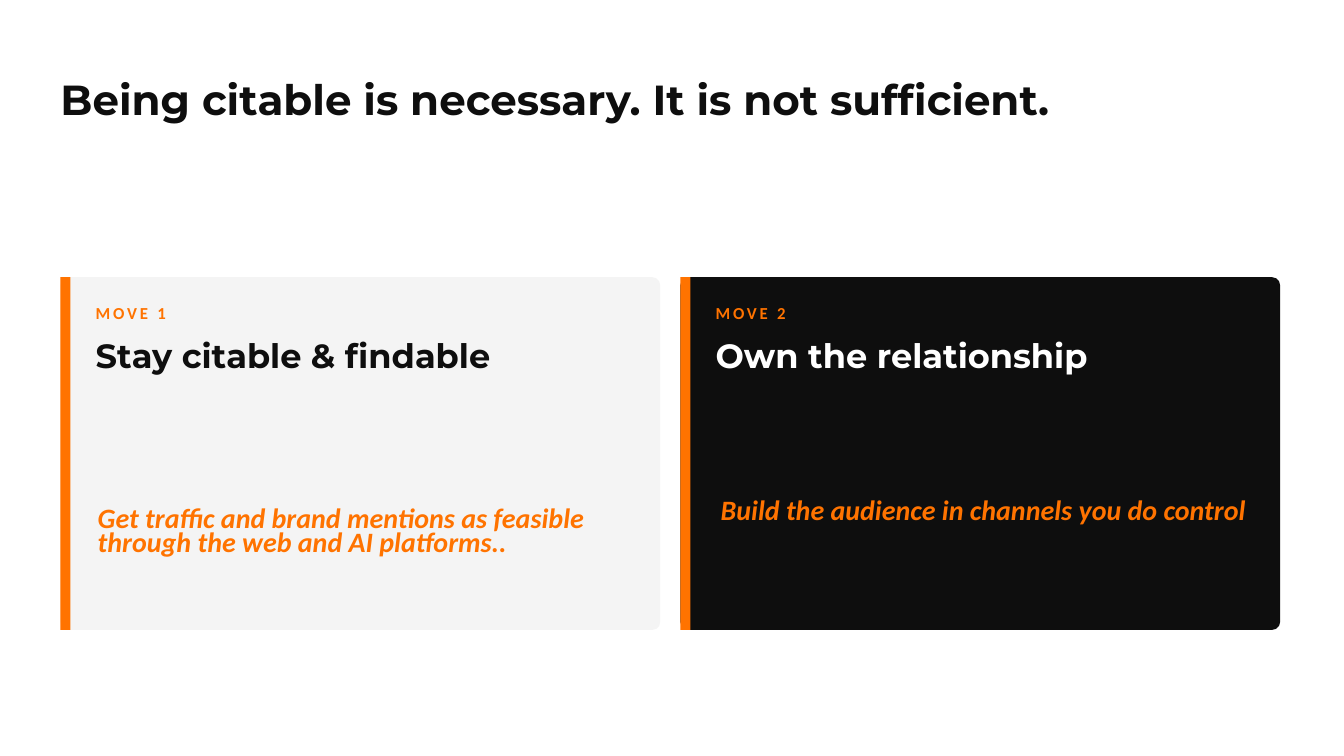
import pptx
import pptx.util
import pptx.dml.color
import pptx.enum.shapes
import pptx.enum.text

Pt = pptx.util.Pt
RGBColor = pptx.dml.color.RGBColor
Shape = pptx.enum.shapes.MSO_SHAPE
Anchor = pptx.enum.text.MSO_ANCHOR

INK = RGBColor(0x0E, 0x0E, 0x0E)
ORANGE = RGBColor(0xFF, 0x73, 0x00)
PALE = RGBColor(0xF4, 0xF4, 0xF4)
WHITE = RGBColor(0xFF, 0xFF, 0xFF)

HEAD = "Montserrat"
BODY = "Calibri"
LEFT, TOP = 43.2, 198
WIDTH, HEIGHT, GAP = 428.4, 252, 14.4
INSET = 25.2  # from card edge to label and heading
INNER = 381.6  # width of the text in a card


def add_text(slide, text, box, font, size, color, anchor=Anchor.MIDDLE,
             leading=None, italic=False, tracking=None):
    frame = slide.shapes.add_textbox(*map(Pt, box)).text_frame
    frame.word_wrap = True
    frame.vertical_anchor = anchor
    frame.margin_left = frame.margin_right = 0
    frame.margin_top = frame.margin_bottom = 0
    frame.text = text
    line = frame.paragraphs[0]
    if leading:
        line.line_spacing = Pt(leading)
    run = line.runs[0]
    run.font.name = font
    run.font.size = Pt(size)
    run.font.bold = True
    run.font.italic = italic
    run.font.color.rgb = color
    if tracking:
        # Letter spacing is in hundredths of a point
        run.font._element.set("spc", str(tracking * 100))


def add_block(slide, kind, box, color):
    block = slide.shapes.add_shape(kind, *map(Pt, box))
    block.shadow.inherit = False
    block.fill.solid()
    block.fill.fore_color.rgb = color
    block.line.fill.background()
    return block


def add_card(slide, left, fill, color, label, title, note, shift, top):
    # Panel with accent bar
    panel = add_block(slide, Shape.ROUNDED_RECTANGLE,
                      (left, TOP, WIDTH, HEIGHT), fill)
    panel.adjustments[0] = 0.023
    add_block(slide, Shape.RECTANGLE, (left, TOP, 7.2, HEIGHT), ORANGE)

    # Label, heading and note
    inner = left + INSET
    add_text(slide, label, (inner, TOP + 14.4, INNER, 21.6),
             BODY, 12, ORANGE, tracking=2)
    add_text(slide, title, (inner, TOP + 36, INNER, 39.6), HEAD, 24, color)
    add_text(slide, note, (inner + shift, top, INNER, 36),
             BODY, 20, ORANGE, leading=17, italic=True)


def main():
    deck = pptx.Presentation()
    deck.slide_width, deck.slide_height = Pt(960), Pt(540)
    slide = deck.slides.add_slide(deck.slide_layouts[6])

    # Title
    add_text(slide, "Being citable is necessary. It is not sufficient.",
             (LEFT, 56.16, 871.2, 68.4), HEAD, 30, INK,
             anchor=Anchor.TOP, leading=32)

    # Two moves side by side
    cards = [
        (PALE, INK, "MOVE 1", "Stay citable & findable",
         "Get traffic and brand mentions as feasible "
         "through the web and AI platforms..", 1.44, 363.6),
        (INK, WHITE, "MOVE 2", "Own the relationship",
         "Build the audience in channels you do control", 3.6, 349.2),
    ]
    for index, card in enumerate(cards):
        add_card(slide, LEFT + index * (WIDTH + GAP), *card)

    deck.save("out.pptx")


if __name__ == "__main__":
    main()
